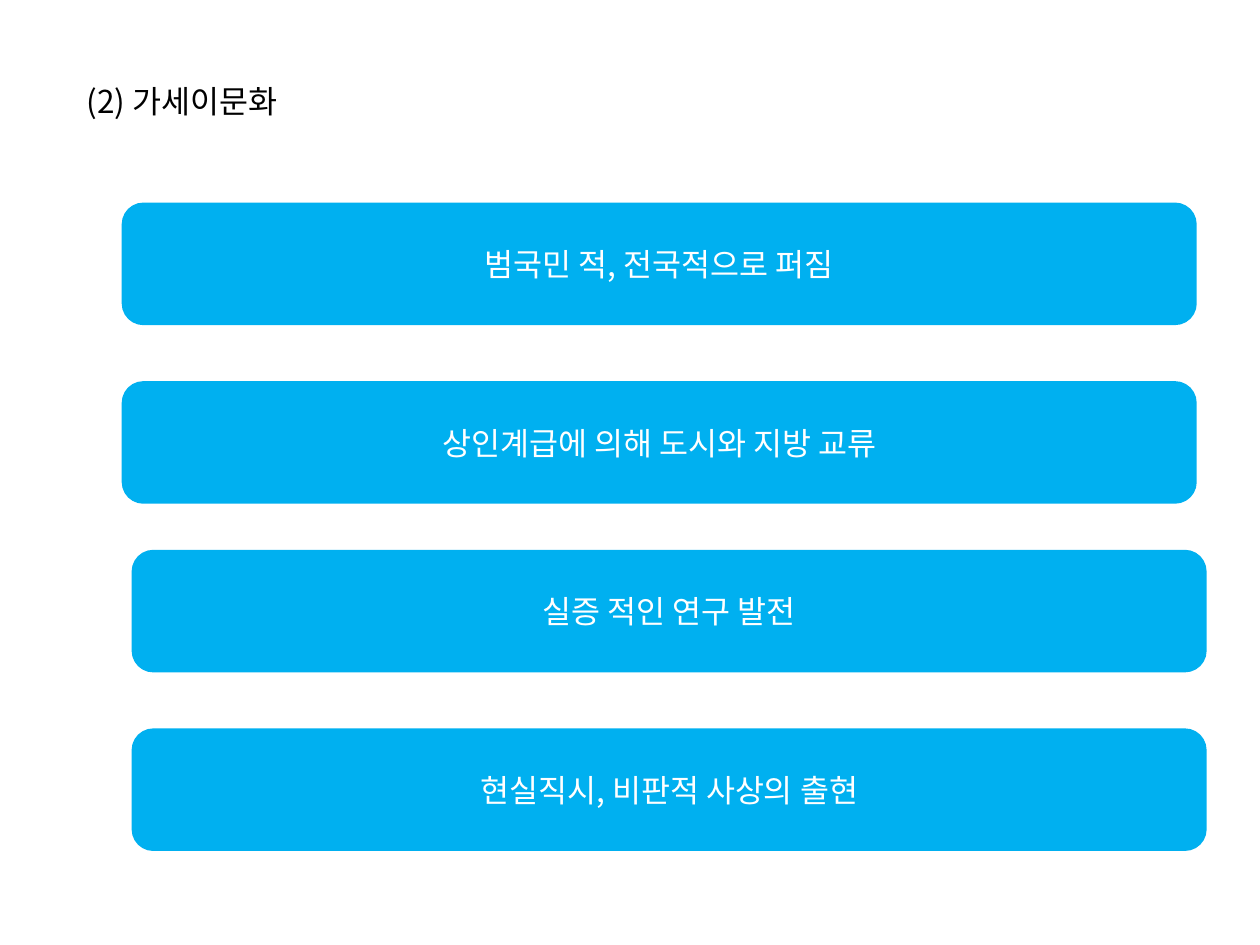
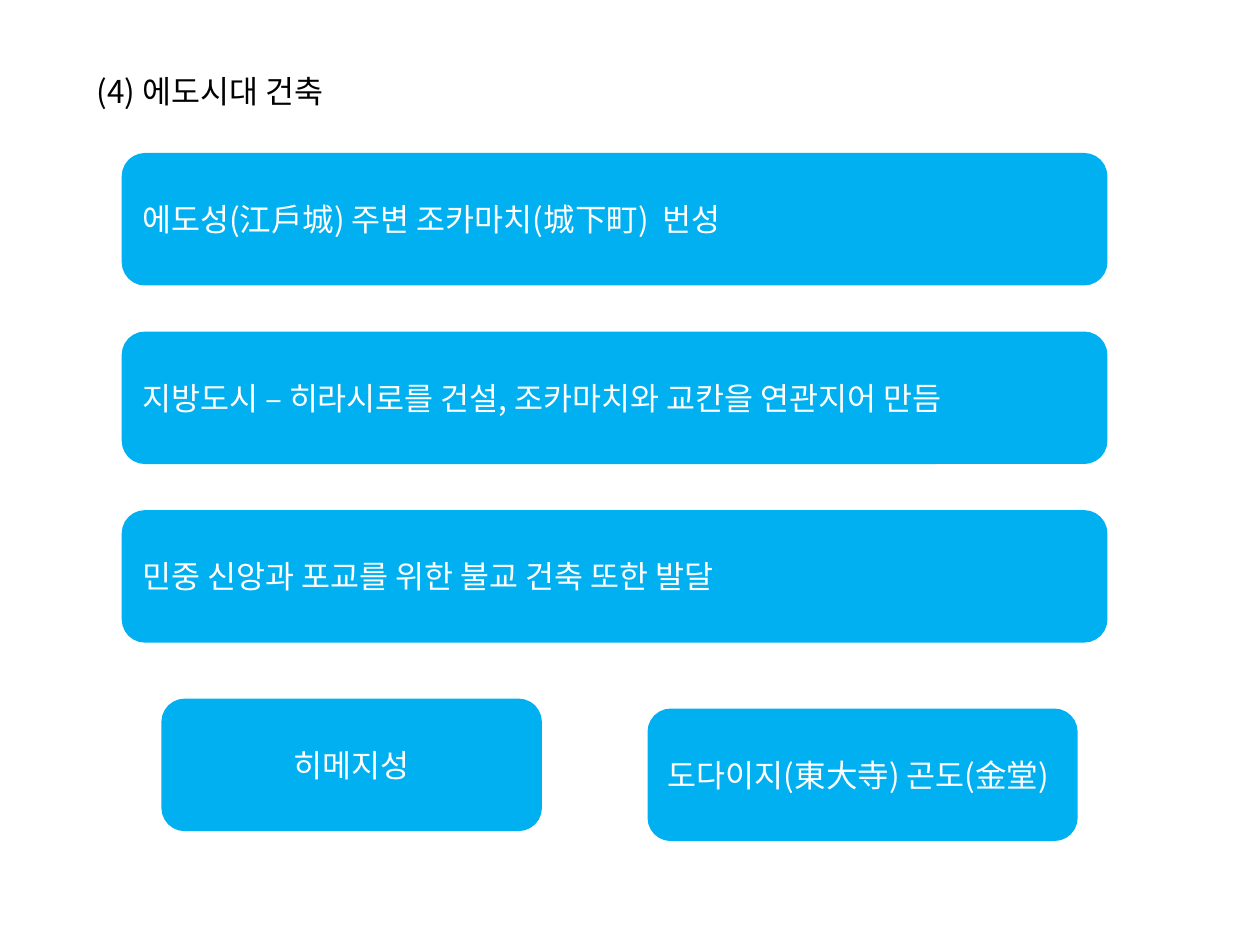
from pptx import Presentation
from pptx.dml.color import RGBColor
from pptx.enum.shapes import MSO_SHAPE
from pptx.enum.text import MSO_ANCHOR, MSO_AUTO_SIZE, PP_ALIGN
from pptx.oxml.ns import qn
from pptx.util import Cm, Inches, Pt

ROUNDED = MSO_SHAPE.ROUNDED_RECTANGLE
TOP, MIDDLE = MSO_ANCHOR.TOP, MSO_ANCHOR.MIDDLE
LEFT, CENTER = PP_ALIGN.LEFT, PP_ALIGN.CENTER
NO_AUTOFIT = MSO_AUTO_SIZE.NONE

COLORS = {"title": "000000", "box": "00B0F0", "box_text": "FFFFFF"}
FONT = "Noto Sans CJK KR"
TITLE_ONLY = 5

CELL = Cm(0.2)
ORIGIN_COL, ORIGIN_ROW = 0.45, 0.6
ROW_PITCH = 18


def rgb(name):
    return RGBColor.from_string(COLORS[name])


def place(sp, col, row, cols, rows):
    """Position a shape on the grid of 2 mm cells."""
    sp.left = int((col + ORIGIN_COL) * CELL)
    sp.top = int((row + ORIGIN_ROW) * CELL)
    sp.width, sp.height = cols * CELL, rows * CELL


def write(sp, text, color, align=LEFT, anchor=MIDDLE, size=18):
    tf = sp.text_frame
    tf.word_wrap = True
    tf.auto_size = NO_AUTOFIT
    tf.vertical_anchor = anchor
    p = tf.paragraphs[0]
    p.alignment = align
    r = p.add_run()
    r.text = text
    r.font.size = Pt(size)
    r.font.name = FONT
    r.font.color.rgb = rgb(color)
    east_asian = r.font._element.makeelement(qn("a:ea"), {"typeface": FONT})
    r.font._element.find(qn("a:latin")).addnext(east_asian)


def add_titled_slide(prs, title, *cells):
    slide = prs.slides.add_slide(prs.slide_layouts[TITLE_ONLY])
    sp = slide.shapes.title
    place(sp, *cells)
    write(sp, title, "title", anchor=TOP)
    return slide


def add_box(slide, text, *cells, align=LEFT):
    sp = slide.shapes.add_shape(ROUNDED, 0, 0, CELL, CELL)
    place(sp, *cells)
    sp.shadow.inherit = False
    sp.fill.solid()
    sp.fill.fore_color.rgb = rgb("box")
    sp.line.color.rgb = rgb("box")
    sp.line.width = Pt(2)
    write(sp, text, "box_text", align=align)


def add_stack(slide, texts, col, row, cols, rows, align=LEFT):
    """Stack equal boxes downwards, one row pitch apart."""
    for i, text in enumerate(texts):
        add_box(slide, text, col, row + i * ROW_PITCH, cols, rows, align=align)


def build_kasei_culture(prs):
    slide = add_titled_slide(prs, "(2) 가세이문화", 7, 7, 41, 5)
    spread = ["범국민 적, 전국적으로 퍼짐", "상인계급에 의해 도시와 지방 교류"]
    thought = ["실증 적인 연구 발전", "현실직시, 비판적 사상의 출현"]
    add_stack(slide, spread, 12, 20, 108, 12, align=CENTER)
    add_stack(slide, thought, 13, 55, 108, 12, align=CENTER)


def build_edo_architecture(prs):
    slide = add_titled_slide(prs, "(4) 에도시대 건축", 8, 6, 68, 13)
    features = [
        "에도성(江戶城) 주변 조카마치(城下町)  번성",
        "지방도시 – 히라시로를 건설, 조카마치와 교칸을 연관지어 만듬",
        "민중 신앙과 포교를 위한 불교 건축 또한 발달",
    ]
    add_stack(slide, features, 12, 15, 99, 13)
    add_box(slide, "히메지성", 16, 70, 38, 13, align=CENTER)
    add_box(slide, "도다이지(東大寺) 곤도(金堂)", 65, 71, 43, 13)


def main():
    prs = Presentation()
    prs.slide_width, prs.slide_height = Inches(10), Inches(7.5)
    build_kasei_culture(prs)
    build_edo_architecture(prs)
    prs.save("out.pptx")


if __name__ == "__main__":
    main()
